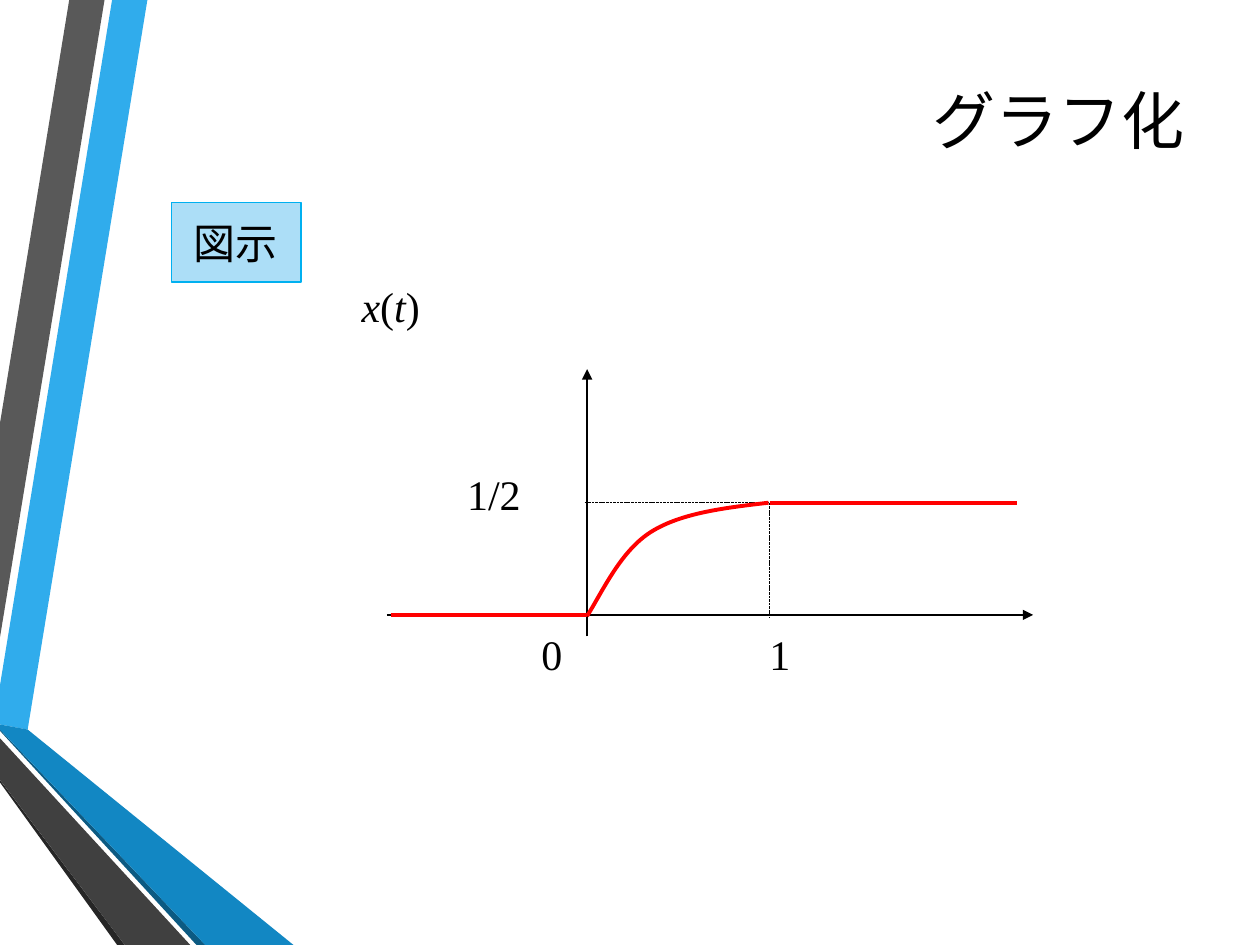
"""Build a slide that plots a step-like response x(t)."""
from dataclasses import dataclass

import pptx
import pptx.dml.color
import pptx.enum.dml
import pptx.enum.shapes
import pptx.enum.text
import pptx.oxml
import pptx.oxml.ns
import pptx.util

PX = 9144
qn = pptx.oxml.ns.qn
Pt = pptx.util.Pt
ALIGN = pptx.enum.text.PP_ALIGN
Point = tuple[int, int]


@dataclass(frozen=True)
class Theme:
    ink: str = "000000"
    curve: str = "FF0000"
    tag_fill: str = "ACDEF7"
    tag_line: str = "00B0F0"
    title_font: str = "Cabin"
    math_font: str = "Times New Roman"
    title_size: float = 36
    text_size: float = 24
    leading: float = 33.6
    spacing: float = 6
    guide_width: float = 0.5
    axis_width: float = 0.75
    curve_width: float = 2.25


@dataclass(frozen=True)
class Band:
    color: str
    points: tuple[Point, ...]


@dataclass(frozen=True)
class Segment:
    start: Point
    end: Point
    color: str
    width: float
    dashed: bool = False
    arrow: bool = False


@dataclass(frozen=True)
class Label:
    box: tuple[int, int, int, int]
    runs: tuple[str, ...]
    align: ALIGN = ALIGN.CENTER


THEME = Theme()
BANDS = (
    Band("30ACEC", ((0, 544), (0, 575), (22, 579), (117, 0), (89, 0))),
    Band("595959", ((83, 0), (55, 0), (0, 336), (0, 506))),
    Band("262626", ((0, 619), (0, 621), (93, 750), (99, 750))),
    Band("0C5A82", ((0, 579), (0, 580), (156, 750), (163, 750))),
    Band("1287C3", ((0, 579), (163, 750), (233, 750), (22, 579), (0, 575))),
    Band("404040", ((0, 619), (99, 750), (151, 750), (0, 586))),
)
ORIGIN_X, ONE_X = 466, 611
BASE_Y, HALF_Y = 488, 399
GUIDES = (
    Segment((464, HALF_Y), (661, HALF_Y), THEME.ink, THEME.guide_width, dashed=True),
    Segment((ONE_X, HALF_Y), (ONE_X, 490), THEME.ink, THEME.guide_width, dashed=True),
)
AXES = (
    Segment((307, BASE_Y), (820, BASE_Y), THEME.ink, THEME.axis_width, arrow=True),
    Segment((ORIGIN_X, 505), (ORIGIN_X, 293), THEME.ink, THEME.axis_width, arrow=True),
)
LEVELS = (
    Segment((ONE_X, HALF_Y), (807, HALF_Y), THEME.curve, THEME.curve_width),
    Segment((310, BASE_Y), (ORIGIN_X, BASE_Y), THEME.curve, THEME.curve_width),
)
RISE = ((466, 489), (479, 468), (493, 437), (517, 422), (541, 407), (576, 403), (610, 399))
LABELS = (
    Label((402, 492, 72, 93), ("0",)),
    Label((326, 365, 132, 40), ("1/2",)),
    Label((287, 216, 56, 67), ("x", "(", "t", ")"), ALIGN.LEFT),
    Label((553, 492, 132, 40), ("1",)),
)


def rgb(color: str) -> pptx.dml.color.RGBColor:
    """Turn a hex string into a colour."""
    return pptx.dml.color.RGBColor.from_string(color)


def emu(*lengths: int) -> list[int]:
    """Scale px lengths to EMU."""
    return [n * PX for n in lengths]


def place(sp, left: int, top: int, width: int, height: int) -> None:
    """Move and size a shape."""
    sp.left, sp.top, sp.width, sp.height = emu(left, top, width, height)


def style_font(p, name: str, size: float) -> None:
    """Set the font of a whole paragraph."""
    p.font.name, p.font.size = name, Pt(size)
    p.font.color.rgb = rgb(THEME.ink)


def style_body(p, align: ALIGN) -> None:
    """Give a paragraph the body font and spacing."""
    style_font(p, THEME.math_font, THEME.text_size)
    p.alignment = align
    p.line_spacing = Pt(THEME.leading)
    p.space_before = p.space_after = Pt(THEME.spacing)


def draw_outline(slide, points: tuple[Point, ...], close: bool):
    """Draw an outline through the points."""
    builder = slide.shapes.build_freeform(*points[0], scale=PX)
    builder.add_line_segments(points[1:], close=close)
    sp = builder.convert_to_shape()
    sp.shadow.inherit = False
    return sp


def draw_band(slide, band: Band) -> None:
    """Draw one decorative band."""
    sp = draw_outline(slide, band.points, close=True)
    sp.fill.solid()
    sp.fill.fore_color.rgb = rgb(band.color)
    sp.line.fill.background()


def draw_curve(slide, points: tuple[Point, ...]) -> None:
    """Draw a cubic curve from a start point and triples of control points."""
    sp = draw_outline(slide, points, close=False)
    sp.fill.background()
    sp.line.color.rgb = rgb(THEME.curve)
    sp.line.width = Pt(THEME.curve_width)
    lines = list(sp.element.iter(qn("a:lnTo")))
    for i in range(0, len(lines), 3):
        bezier = pptx.oxml.parse_xml(f"<a:cubicBezTo {pptx.oxml.ns.nsdecls('a')}/>")
        lines[i].addprevious(bezier)
        for line in lines[i:i + 3]:
            bezier.append(line[0])
            line.getparent().remove(line)


def draw_segment(slide, seg: Segment) -> None:
    """Draw a straight line with optional dashes or arrowhead."""
    kind = pptx.enum.shapes.MSO_CONNECTOR.STRAIGHT
    sp = slide.shapes.add_connector(kind, *emu(*seg.start, *seg.end))
    sp.line.color.rgb = rgb(seg.color)
    sp.line.width = Pt(seg.width)
    if seg.dashed:
        sp.line.dash_style = pptx.enum.dml.MSO_LINE.SQUARE_DOT
    if seg.arrow:
        ln = sp.line._get_or_add_ln()
        ln.append(ln.makeelement(qn("a:tailEnd"), {"type": "triangle"}))
    props = sp.element.spPr
    props.append(props.makeelement(qn("a:effectLst"), {}))


def draw_label(slide, label: Label) -> None:
    """Draw a label whose letters are italic."""
    tf = slide.shapes.add_textbox(*emu(*label.box)).text_frame
    tf.word_wrap = True
    tf.margin_left = tf.margin_right = tf.margin_top = tf.margin_bottom = 0
    p = tf.paragraphs[0]
    style_body(p, label.align)
    for text in label.runs:
        r = p.add_run()
        r.text = text
        r.font.italic = text.isalpha()


def draw_title(slide, text: str) -> None:
    """Fill and format the title placeholder."""
    sp = slide.shapes.title
    place(sp, 107, 50, 843, 89)
    sp.text_frame.text = text
    sp.text_frame.vertical_anchor = pptx.enum.text.MSO_ANCHOR.MIDDLE
    p = sp.text_frame.paragraphs[0]
    p.alignment = ALIGN.RIGHT
    style_font(p, THEME.title_font, THEME.title_size)


def draw_tag(slide, text: str) -> None:
    """Draw the framed heading tag."""
    kind = pptx.enum.shapes.MSO_SHAPE.RECTANGLE
    sp = slide.shapes.add_shape(kind, *emu(136, 161, 103, 63))
    sp.shadow.inherit = False
    sp.fill.solid()
    sp.fill.fore_color.rgb = rgb(THEME.tag_fill)
    sp.line.color.rgb = rgb(THEME.tag_line)
    sp.line.width = Pt(THEME.axis_width)
    tf = sp.text_frame
    tf.text = text
    tf.margin_left = 18 * PX
    tf.vertical_anchor = pptx.enum.text.MSO_ANCHOR.TOP
    style_body(tf.paragraphs[0], ALIGN.LEFT)


def main() -> None:
    """Build and save the slide."""
    prs = pptx.Presentation()
    prs.slide_width, prs.slide_height = emu(1000, 750)
    slide = prs.slides.add_slide(prs.slide_layouts[5])
    for band in BANDS:
        draw_band(slide, band)
    draw_title(slide, "グラフ化")
    draw_tag(slide, "図示")
    for seg in GUIDES + AXES + LEVELS:
        draw_segment(slide, seg)
    for label in LABELS:
        draw_label(slide, label)
    draw_curve(slide, RISE)
    prs.save("out.pptx")


if __name__ == "__main__":
    main()
